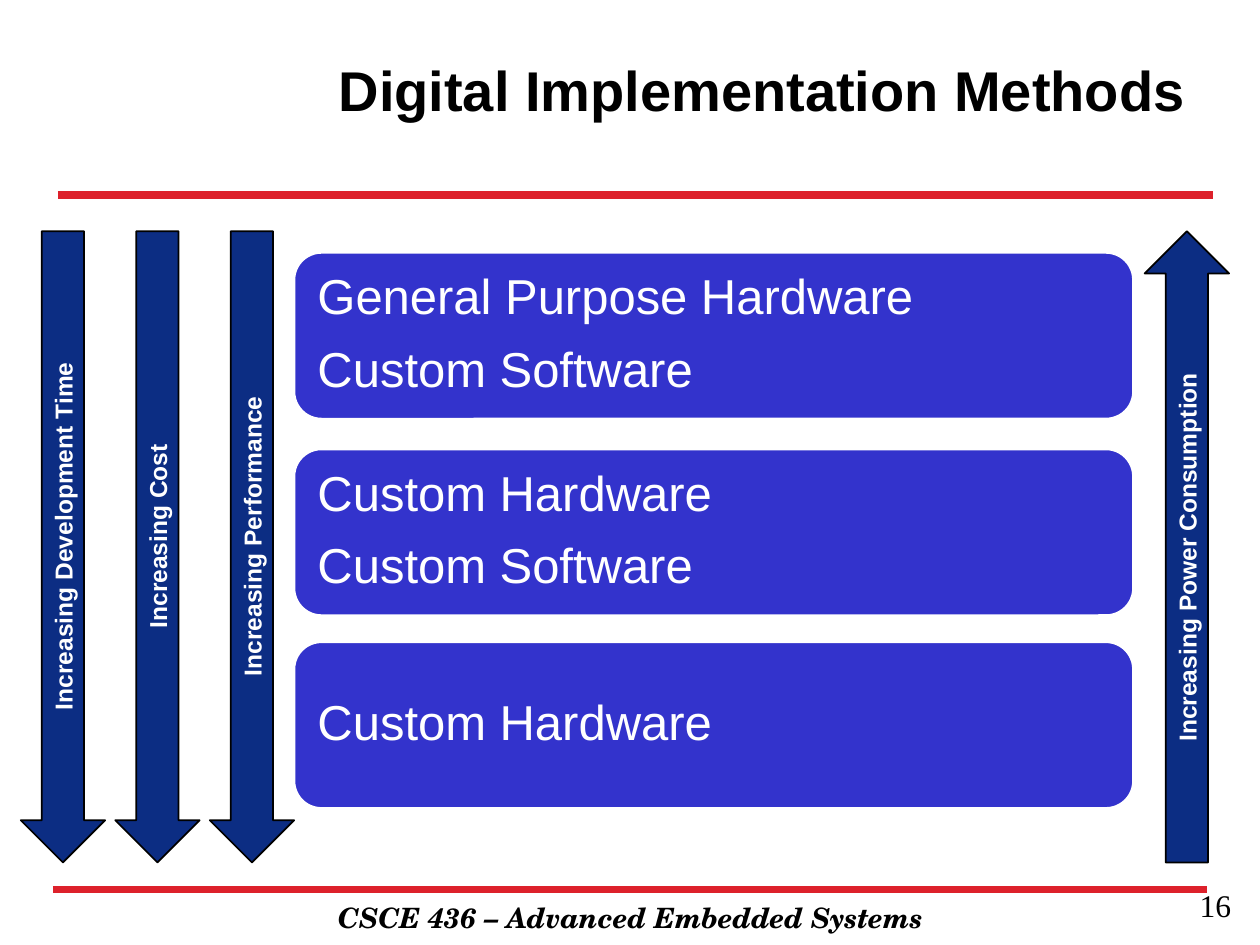
from typing import NamedTuple

import lxml.etree
import pptx
import pptx.dml.color
import pptx.enum.shapes
import pptx.enum.text
import pptx.oxml.ns
import pptx.util
from pptx.util import Inches

Align = pptx.enum.text.PP_ALIGN
Anchor = pptx.enum.text.MSO_ANCHOR
Preset = pptx.enum.shapes.MSO_SHAPE

RED, NAVY, BLUE = "DD212B", "0C2D83", "3333CC"
BLACK, WHITE = "000000", "FFFFFF"


class Style(NamedTuple):
    size: float
    color: str
    font: str = "Arial"
    bold: bool = False
    italic: bool = False


class Method(NamedTuple):
    top: float
    lines: list[str]


class Trend(NamedTuple):
    text: str
    center_x: float
    points_down: bool = True


METHODS = [
    Method(2, ["General Purpose Hardware", "Custom Software"]),
    Method(3.56, ["Custom Hardware", "Custom Software"]),
    Method(5.09, ["Custom Hardware"]),
]
TRENDS = [
    Trend("Increasing Development Time", 0.5),
    Trend("Increasing Cost", 1.25),
    Trend("Increasing Performance", 2),
    Trend("Increasing Power Consumption", 9.42, points_down=False),
]
ARROW_LENGTH, ARROW_THICKNESS, ARROW_CENTER_Y = 5.01, 0.67, 4.34
METHOD_STYLE = Style(28, WHITE)
TREND_STYLE = Style(14, WHITE, bold=True)


def rgb(color: str) -> pptx.dml.color.RGBColor:
    return pptx.dml.color.RGBColor.from_string(color)


def write(shape, lines: list[str], style: Style, align=Align.LEFT, anchor=Anchor.TOP) -> None:
    frame = shape.text_frame
    frame.word_wrap = True
    frame.vertical_anchor = anchor
    frame.text = "\n".join(lines)
    for paragraph in frame.paragraphs:
        paragraph.alignment = align
        font = paragraph.runs[0].font
        font.name, font.size = style.font, pptx.util.Pt(style.size)
        font.bold, font.italic = style.bold, style.italic
        font.color.rgb = rgb(style.color)


def add_text(slide, left: float, top: float, width: float, height: float,
             lines: list[str], style: Style, align=Align.LEFT, anchor=Anchor.TOP):
    box = slide.shapes.add_textbox(Inches(left), Inches(top), Inches(width), Inches(height))
    write(box, lines, style, align, anchor)
    return box


def add_preset(slide, preset, left: float, top: float, width: float, height: float,
               fill: str, line: str, line_width: float):
    shape = slide.shapes.add_shape(preset, Inches(left), Inches(top), Inches(width), Inches(height))
    shape.shadow.inherit = False
    shape.fill.solid()
    shape.fill.fore_color.rgb = rgb(fill)
    shape.line.color.rgb = rgb(line)
    shape.line.width = pptx.util.Pt(line_width)
    return shape


def add_rule(slide, left: float, right: float, y: float) -> None:
    rule = slide.shapes.add_connector(
        pptx.enum.shapes.MSO_CONNECTOR.STRAIGHT, Inches(left), Inches(y), Inches(right), Inches(y))
    rule.line.color.rgb = rgb(RED)
    rule.line.width = pptx.util.Pt(4.5)
    lxml.etree.SubElement(rule._element.spPr, pptx.oxml.ns.qn("a:effectLst"))


def add_method(slide, method: Method) -> None:
    add_preset(slide, Preset.ROUNDED_RECTANGLE, 2.33, method.top, 6.67, 1.33, BLUE, WHITE, 2)
    box = add_text(slide, 2.4, method.top + 0.06, 6.54, 1.2, method.lines, METHOD_STYLE,
                   anchor=Anchor.MIDDLE)
    frame = box.text_frame
    frame.margin_left = frame.margin_right = Inches(0.12)
    frame.margin_top = frame.margin_bottom = Inches(0.12)
    for paragraph in frame.paragraphs:
        paragraph.line_spacing = 0.9
        paragraph.space_after = pptx.util.Pt(11)


def add_trend(slide, trend: Trend) -> None:
    """Add a vertical arrow whose label reads from bottom to top."""
    arrow = add_preset(slide, Preset.RIGHT_ARROW, trend.center_x - ARROW_LENGTH / 2,
                       ARROW_CENTER_Y - ARROW_THICKNESS / 2, ARROW_LENGTH, ARROW_THICKNESS,
                       NAVY, BLACK, 1)
    arrow.rotation = 270
    if trend.points_down:
        arrow._element.spPr.xfrm.set("flipH", "1")
    write(arrow, [trend.text], TREND_STYLE, Align.CENTER)


def main() -> None:
    presentation = pptx.Presentation()
    presentation.slide_width, presentation.slide_height = Inches(10), Inches(7.5)
    slide = presentation.slides.add_slide(presentation.slide_layouts[6])

    add_rule(slide, 0.42, 9.58, 7.06)
    add_rule(slide, 0.46, 9.63, 1.55)
    add_text(slide, 1.42, 7.1, 7.17, 0.37, ["CSCE 436 – Advanced Embedded Systems"],
             Style(16, BLACK, "TeX Gyre Schola", bold=True, italic=True), Align.CENTER)
    add_text(slide, 2.09, 0.08, 7.42, 1.25, ["Digital Implementation Methods"],
             Style(32, BLACK, bold=True), Align.RIGHT, Anchor.MIDDLE)
    add_text(slide, 7.54, 6.98, 2.33, 0.52, ["16"],
             Style(18, BLACK, "Times New Roman"), Align.RIGHT)
    for method in METHODS:
        add_method(slide, method)
    for trend in TRENDS:
        add_trend(slide, trend)

    presentation.save("out.pptx")


if __name__ == "__main__":
    main()
